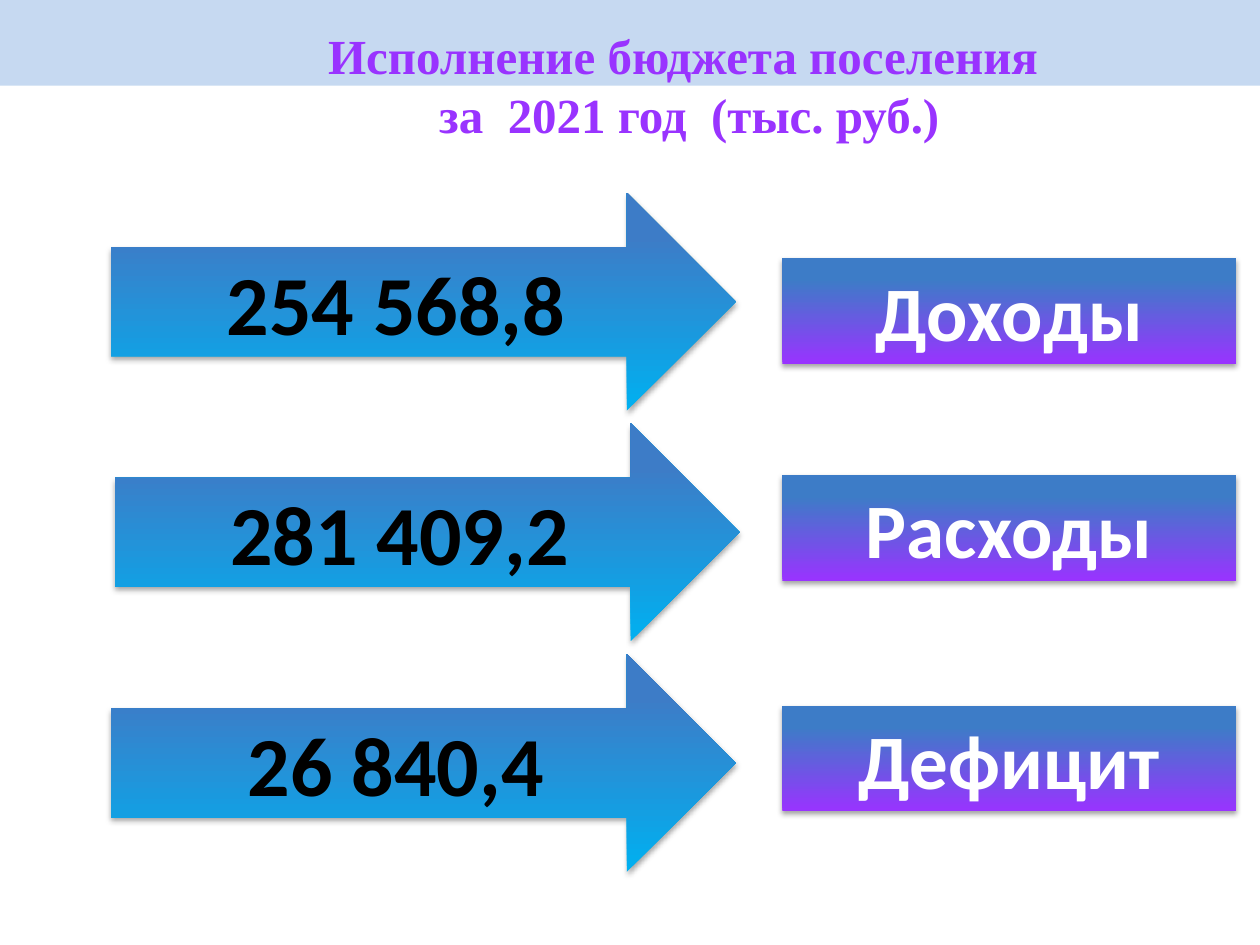
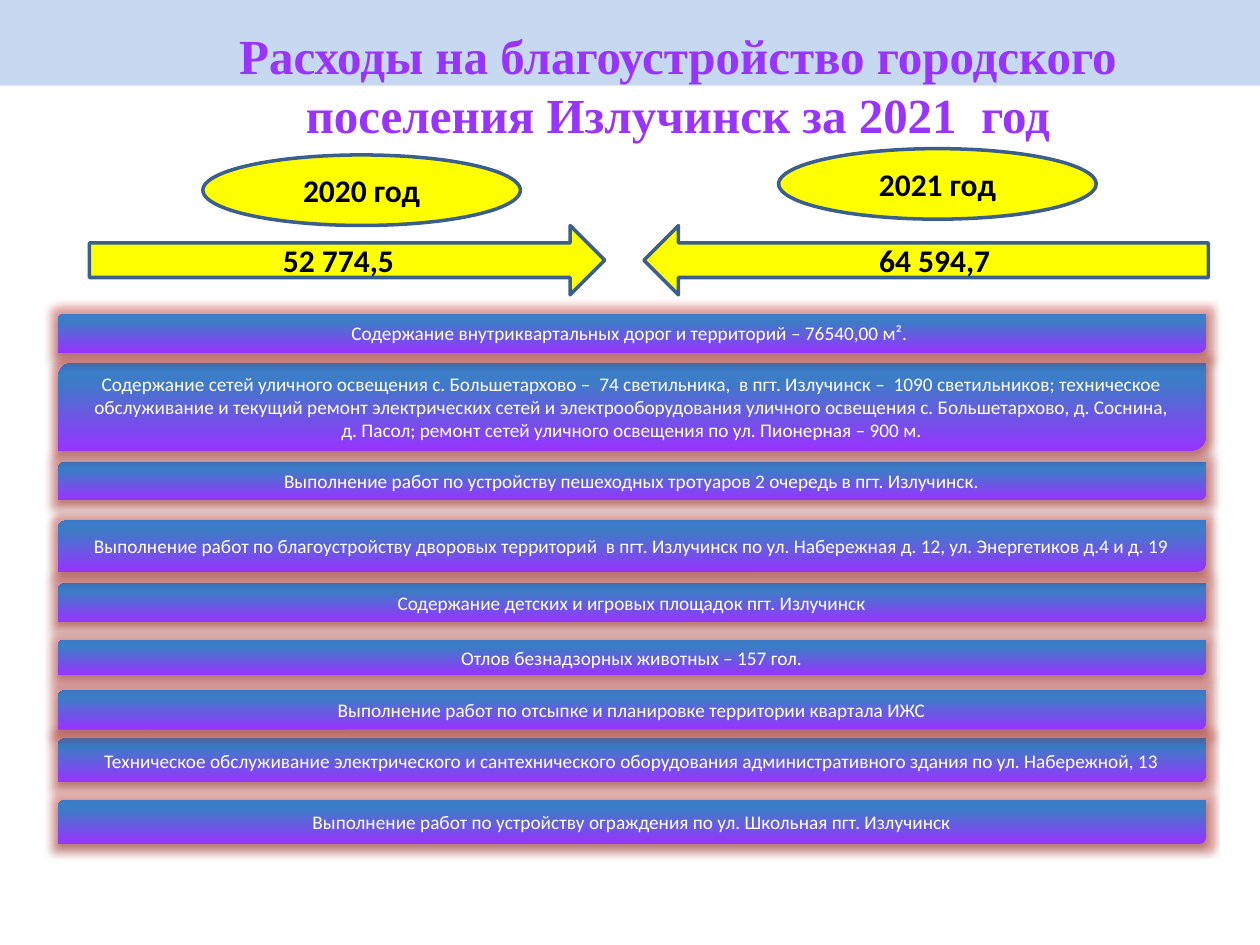
"""Build two slides on the budget of a settlement for 2021."""
import lxml.etree
import pptx
import pptx.dml.color
import pptx.enum.shapes
import pptx.enum.text
import pptx.oxml.ns
import pptx.util

RGBColor = pptx.dml.color.RGBColor
SHAPE = pptx.enum.shapes.MSO_SHAPE

BAND = RGBColor(0xC6, 0xD9, 0xF1)
PURPLE = RGBColor(0x99, 0x33, 0xFF)
BLUE = RGBColor(0x3D, 0x7C, 0xC7)
CYAN = RGBColor(0x00, 0xB0, 0xF0)
YELLOW = RGBColor(0xFF, 0xFF, 0x00)
OUTLINE = RGBColor(0x3A, 0x5F, 0x8C)
BLACK = RGBColor(0x00, 0x00, 0x00)
WHITE = RGBColor(0xFF, 0xFF, 0xFF)
GLOW = RGBColor(0xD5, 0x3D, 0x35)

COLUMNS, ROWS = 100, 75
WIDTH, HEIGHT = pptx.util.Inches(10), pptx.util.Inches(7.5)
TITLE_ONLY = 5

BUDGET_ROWS = [
    ("254 568,8", 8.8, "Доходы", 20.5),
    ("281 409,2", 9.1, "Расходы", 37.7),
    ("26 840,4", 8.8, "Дефицит", 56),
]
YEARS = [
    ("2020 год", (16.1, 12.3), "52 774,5", (7.1, 40.9), SHAPE.RIGHT_ARROW),
    ("2021 год", (61.8, 11.8), "64 594,7", (51.1, 44.8), SHAPE.LEFT_ARROW),
]
WORKS = [
    (24.9, 3.1, "Содержание внутриквартальных дорог и территорий – 76540,00 м². "),
    (28.8, 7, "Содержание сетей уличного освещения с. Большетархово –  74 светильника,  "
     "в пгт. Излучинск –  1090 светильников; техническое обслуживание и текущий ремонт "
     "электрических сетей и электрооборудования уличного освещения с. Большетархово, "
     "д. Соснина,\vд. Пасол; ремонт сетей уличного освещения по ул. Пионерная – 900 м."),
    (36.7, 3, "Выполнение работ по устройству пешеходных тротуаров 2 очередь в пгт. Излучинск."),
    (41.3, 4.1, "Выполнение работ по благоустройству дворовых территорий  в пгт. Излучинск "
     "по ул. Набережная д. 12, ул. Энергетиков д.4 и д. 19"),
    (46.3, 3.1, "Содержание детских и игровых площадок пгт. Излучинск"),
    (50.8, 2.8, "Отлов безнадзорных животных – 157 гол."),
    (54.8, 3.1, "Выполнение работ по отсыпке и планировке территории квартала ИЖС"),
    (58.6, 3.5, "Техническое обслуживание электрического и сантехнического оборудования "
     "административного здания по ул. Набережной, 13"),
    (63.5, 3.5, "Выполнение работ по устройству ограждения по ул. Школьная пгт. Излучинск"),
]


def grid(left, top, width, height):
    """Turn columns and rows into slide lengths."""
    return (round(WIDTH * left / COLUMNS), round(HEIGHT * top / ROWS),
            round(WIDTH * width / COLUMNS), round(HEIGHT * height / ROWS))


def write(shape, text, size, color, bold=True, font="Calibri"):
    """Put centred, formatted text into a shape."""
    frame = shape.text_frame
    frame.word_wrap = True
    frame.vertical_anchor = pptx.enum.text.MSO_ANCHOR.MIDDLE
    frame.text = text
    for para in frame.paragraphs:
        para.alignment = pptx.enum.text.PP_ALIGN.CENTER
        for span in para.runs:
            span.font.name = font
            span.font.size = pptx.util.Pt(size)
            span.font.bold = bold
            span.font.color.rgb = color


def add_plain_shape(slide, kind, place, fill):
    """Add a shape with a solid fill, no line and no shadow."""
    shape = slide.shapes.add_shape(kind, *grid(*place))
    shape.shadow.inherit = False
    shape.fill.solid()
    shape.fill.fore_color.rgb = fill
    shape.line.fill.background()
    return shape


def add_effect(shape, name, color, opacity, **attributes):
    """Append one effect to the effect list of a shape."""
    qn = pptx.oxml.ns.qn
    effects = shape.element.spPr.find(qn("a:effectLst"))
    effect = lxml.etree.SubElement(effects, qn(name), attributes)
    tint = lxml.etree.SubElement(effect, qn("a:srgbClr"), val=str(color))
    lxml.etree.SubElement(tint, qn("a:alpha"), val=str(opacity * 1000))


def add_gradient_shape(slide, kind, place, bottom, glow=False):
    """Add a shape that fades from blue at the top, with a soft shadow."""
    shape = add_plain_shape(slide, kind, place, bottom)
    shape.fill.gradient()
    shape.fill.gradient_angle = 90
    for stop, color, position in zip(shape.fill.gradient_stops, (bottom, BLUE), (0, 0.8)):
        stop.color.rgb = color
        stop.position = position
    if glow:
        add_effect(shape, "a:glow", GLOW, 40, rad=str(pptx.util.Pt(8)))
    add_effect(shape, "a:outerShdw", BLACK, 35, blurRad=str(pptx.util.Pt(3.1)),
               dist=str(pptx.util.Pt(1.8)), dir="5400000", rotWithShape="0")
    return shape


def add_yellow_shape(slide, kind, place, text):
    """Add an outlined yellow shape with a bold label."""
    shape = add_plain_shape(slide, kind, place, YELLOW)
    shape.line.color.rgb = OUTLINE
    shape.line.width = pptx.util.Pt(2)
    write(shape, text, 18, BLACK)


def add_page(deck, title, place):
    """Add a title-only slide and format its title."""
    page = deck.slides.add_slide(deck.slide_layouts[TITLE_ONLY])
    box = page.shapes.title
    box.left, box.top, box.width, box.height = grid(*place)
    write(box, title, 28, PURPLE, font="Times New Roman")
    box.text_frame.vertical_anchor = pptx.enum.text.MSO_ANCHOR.TOP
    for para in box.text_frame.paragraphs:
        para.line_spacing = pptx.util.Pt(33.7)
        para.space_before = pptx.util.Pt(0)
    return page


def move_band_to_master(deck, page):
    """Place the top band on the slide master, behind everything."""
    band = add_plain_shape(page, SHAPE.RECTANGLE, (0, 0, COLUMNS, 6.8), BAND)
    band.element.nvSpPr.cNvPr.id = 99
    deck.slide_master.shapes.element.insert(2, band.element)


def fill_budget_page(page):
    """Draw the budget totals as arrows with labels."""
    for row, (amount, left, label, label_top) in enumerate(BUDGET_ROWS):
        arrow = add_gradient_shape(page, SHAPE.RIGHT_ARROW,
                                   (left, 15.3 + 18.3 * row, 49.6, 17.3), CYAN)
        write(arrow, amount, 48, BLACK)
        box = add_gradient_shape(page, SHAPE.RECTANGLE, (62.1, label_top, 36, 8.4), PURPLE)
        write(box, label, 44, WHITE)


def fill_works_page(page):
    """Draw the two yearly totals and the bars of works."""
    for year, (left, top), amount, (arrow_left, arrow_width), arrow in YEARS:
        add_yellow_shape(page, arrow, (arrow_left, 17.9, arrow_width, 5.5), amount)
        add_yellow_shape(page, SHAPE.OVAL, (left, top, 25.2, 5.6), year)
    for top, height, text in reversed(WORKS):
        bar = add_gradient_shape(page, SHAPE.ROUND_2_DIAG_RECTANGLE,
                                 (4.6, top, 91.1, height), PURPLE, glow=True)
        write(bar, text, 11, WHITE, bold=False)


def main():
    """Build and save the deck."""
    deck = pptx.Presentation()
    deck.slide_width, deck.slide_height = WIDTH, HEIGHT
    budget = add_page(deck, "Исполнение бюджета поселения \nза  2021 год  (тыс. руб.)",
                      (11.4, 1.5, 86.6, 10.4))
    move_band_to_master(deck, budget)
    fill_budget_page(budget)
    works = add_page(deck, "Расходы на благоустройство городского поселения "
                     "Излучинск за 2021  год", (8.8, 1.5, 90, 12.5))
    fill_works_page(works)
    deck.save("out.pptx")


if __name__ == "__main__":
    main()
